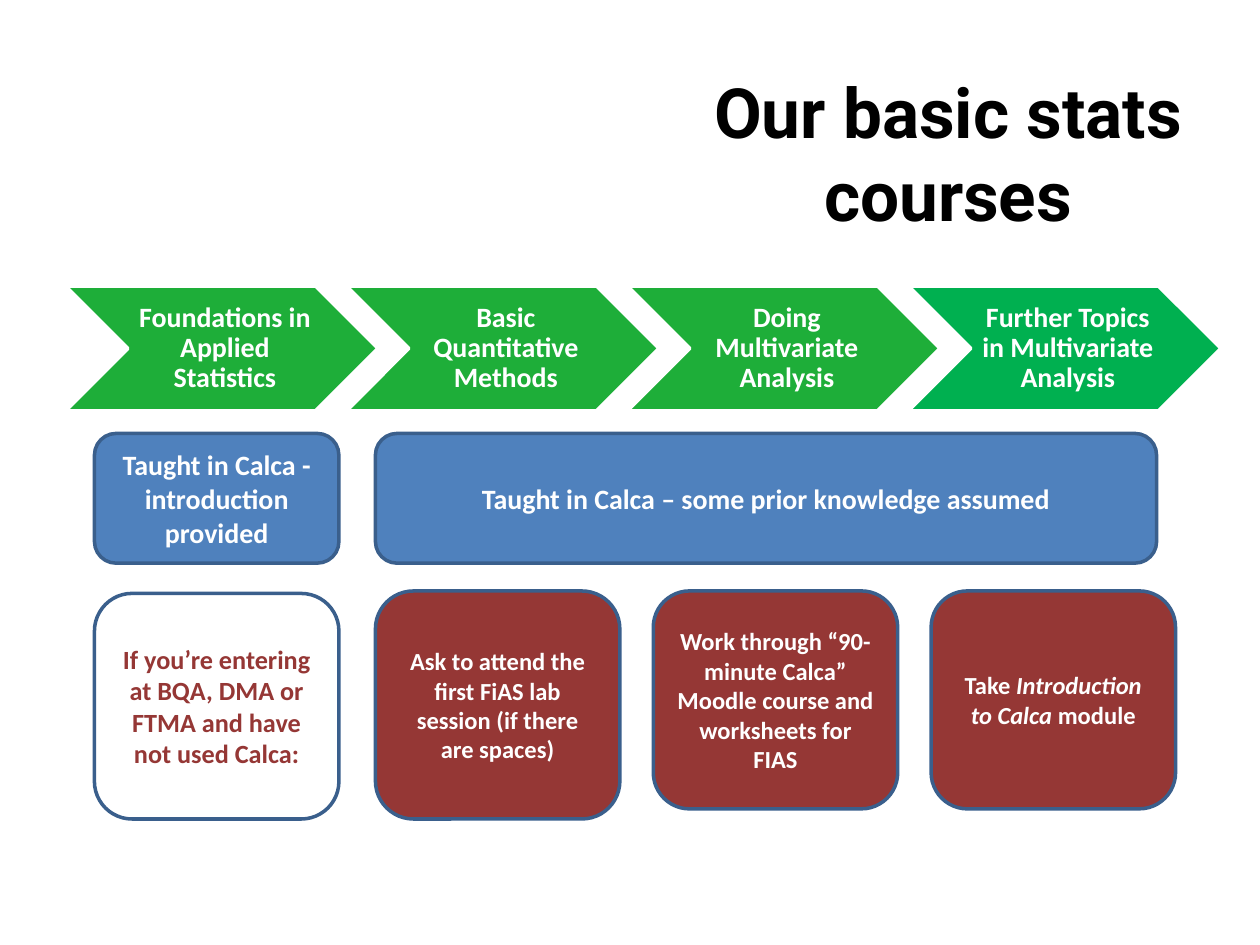
from pptx import Presentation
from pptx.dml.color import RGBColor
from pptx.enum.shapes import MSO_SHAPE
from pptx.enum.text import MSO_ANCHOR, PP_ALIGN
from pptx.util import Inches, Pt

COLORS = {
    "black": "000000",
    "white": "FFFFFF",
    "green": "1EAE39",
    "deep_green": "00B050",
    "blue": "4F81BD",
    "outline": "3A5F8C",
    "red": "953735",
}

COURSES = [
    ("Foundations in Applied Statistics", "green"),
    ("Basic Quantitative Methods", "green"),
    ("Doing Multivariate Analysis", "green"),
    ("Further Topics in Multivariate Analysis", "deep_green"),
]


def rgb(name):
    return RGBColor.from_string(COLORS[name])


def write_text(shape, runs, size, color="white", font_name="Calibri"):
    """Write one centred bold paragraph from (text, italic) runs."""
    frame = shape.text_frame
    frame.word_wrap = True
    frame.vertical_anchor = MSO_ANCHOR.MIDDLE
    paragraph = frame.paragraphs[0]
    paragraph.alignment = PP_ALIGN.CENTER
    paragraph.font.name = font_name
    paragraph.font.size = Pt(size)
    paragraph.font.bold = True
    paragraph.font.color.rgb = rgb(color)
    for text, italic in runs:
        run = paragraph.add_run()
        run.text = text
        if italic:
            run.font.italic = True
    return paragraph


def add_preset(shapes, kind, box, fill, line):
    shape = shapes.add_shape(kind, *map(Inches, box))
    shape.shadow.inherit = False
    if fill:
        shape.fill.solid()
        shape.fill.fore_color.rgb = rgb(fill)
    else:
        shape.fill.background()
    shape.line.color.rgb = rgb(line)
    shape.line.width = Pt(2)
    return shape


def add_title(slide, box):
    title = slide.shapes.add_textbox(*map(Inches, box))
    write_text(title, [("Our basic stats courses", False)], 39.6, "black", "Roboto")


def add_course_chevrons(slide, box):
    left, top, width, height = box
    chevron_width = 2.48
    step = (width - chevron_width) / (len(COURSES) - 1)
    group = slide.shapes.add_group_shape()
    for index, (course, fill) in enumerate(COURSES):
        x = left + index * step
        add_preset(group.shapes, MSO_SHAPE.CHEVRON,
                   (x, top, chevron_width, height), fill, "white")
        # The label sits between the notch and the point, each half the height deep.
        label = group.shapes.add_textbox(
            Inches(x + height / 2), Inches(top),
            Inches(chevron_width - height), Inches(height))
        frame = label.text_frame
        frame.margin_left = Inches(0.07)
        frame.margin_right = frame.margin_top = frame.margin_bottom = Inches(0.02)
        write_text(label, [(course, False)], 16).line_spacing = 0.9


def add_card(slide, box, runs, size, fill, color="white"):
    card = add_preset(slide.shapes, MSO_SHAPE.ROUNDED_RECTANGLE, box, fill, "outline")
    write_text(card, runs, size, color)


def add_software_row(slide, box):
    left, top, width, height = box
    first_width, gap = 1.94, 0.29
    second_left = left + first_width + gap
    add_card(slide, (left, top, first_width, height),
             [("Taught in Calca - introduction provided", False)], 16, "blue")
    add_card(slide, (second_left, top, left + width - second_left, height),
             [("Taught in Calca – some prior knowledge assumed", False)], 16, "blue")


def add_advice_row(slide, box):
    left, top, width, height = box
    card_width, option_step, short_height = 1.94, 2.205, 1.73
    first_option = left + width - card_width - 2 * option_step
    options = [
        ([("Ask to attend the first FiAS lab session (if there are spaces)", False)],
         height),
        ([("Work through “90-minute Calca” Moodle course and worksheets for FIAS", False)],
         short_height),
        ([("Take ", False), ("Introduction to Calca", True), (" module", False)],
         short_height),
    ]
    for index, (runs, card_height) in enumerate(options):
        add_card(slide, (first_option + index * option_step, top, card_width, card_height),
                 runs, 14, "red")
    add_card(slide, (left, top + 0.02, card_width, height - 0.02),
             [("If you’re entering at BQA, DMA or FTMA and have not used Calca:", False)],
             15, None, "red")


def main():
    presentation = Presentation()
    presentation.slide_width = Inches(10)
    presentation.slide_height = Inches(7.5)
    slide = presentation.slides.add_slide(presentation.slide_layouts[6])
    add_title(slide, (5.55, 0.58, 3.95, 1.25))
    add_course_chevrons(slide, (0.52, 2.27, 9.17, 0.99))
    add_software_row(slide, (0.75, 3.44, 8.43, 1.03))
    add_advice_row(slide, (0.75, 4.69, 8.58, 1.81))
    presentation.save("out.pptx")


if __name__ == "__main__":
    main()
